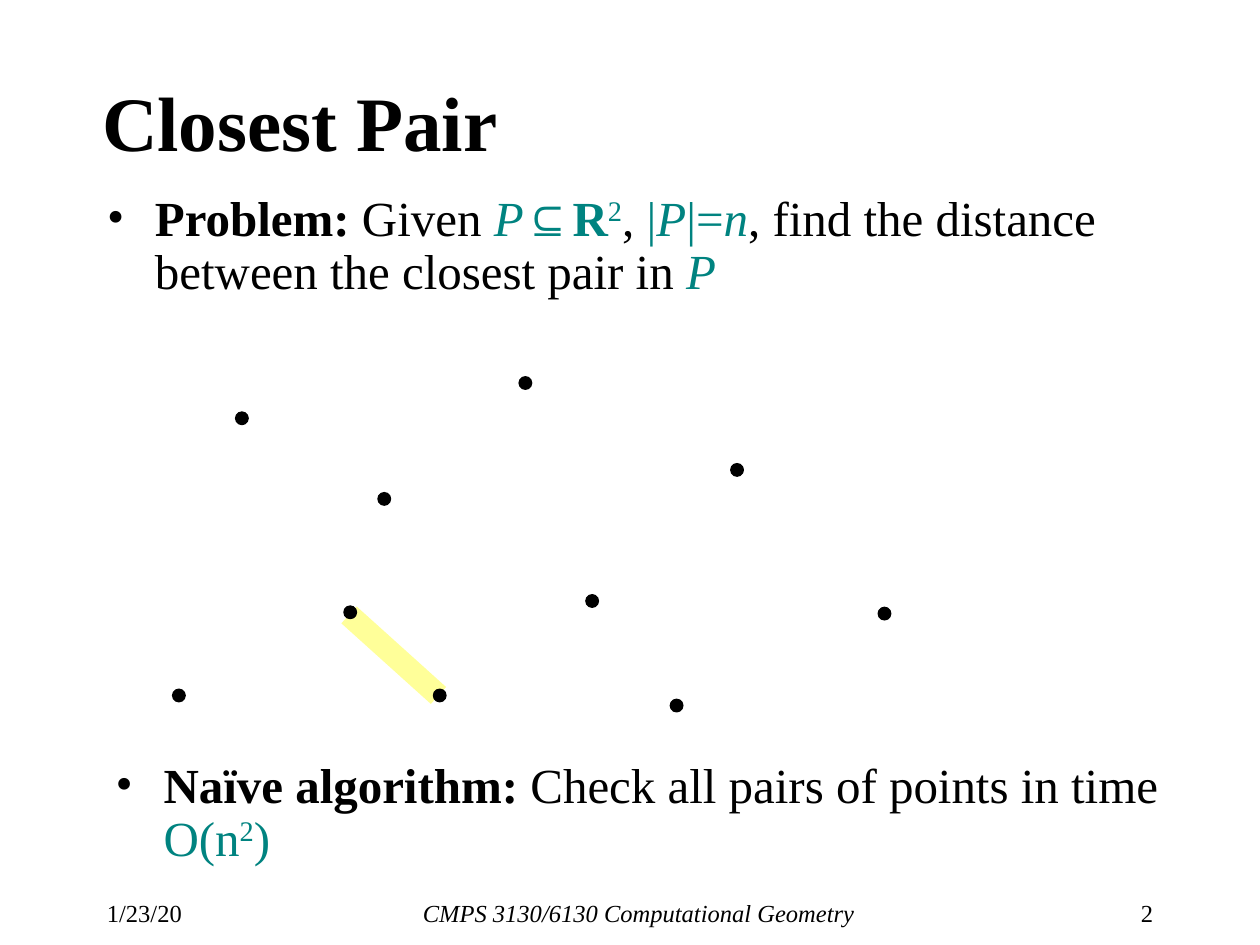
from typing import NamedTuple

from lxml.etree import SubElement
from pptx import Presentation
from pptx.dml.color import RGBColor
from pptx.enum.shapes import MSO_CONNECTOR, MSO_SHAPE
from pptx.enum.text import MSO_ANCHOR, MSO_AUTO_SIZE, PP_ALIGN
from pptx.oxml.ns import qn
from pptx.util import Inches, Pt

FONT = "Times New Roman"
BLACK = "000000"
TEAL = "008380"
YELLOW = "FFFF99"
DOT_SIZE = 0.1
FOOTER_TOP = 7.08
FOOTER_HEIGHT = 0.25


class Span(NamedTuple):
    text: str
    color: str = BLACK
    bold: bool = False
    italic: bool = False
    raised: bool = False


class Footer(NamedTuple):
    text: str
    left: float
    width: float
    alignment: PP_ALIGN
    italic: bool = False


class Point(NamedTuple):
    left: float
    top: float


FOOTERS = [
    Footer("1/23/20", 0.75, 0.95, PP_ALIGN.LEFT),
    Footer("CMPS 3130/6130 Computational Geometry", 1.9, 6.34, PP_ALIGN.CENTER, True),
    Footer("2", 8.43, 0.82, PP_ALIGN.RIGHT),
]

PROBLEM = [
    Span("Problem:", bold=True),
    Span(" Given "),
    Span("P", TEAL, italic=True),
    Span("⊆", TEAL),
    Span("R", TEAL, bold=True),
    Span("2", TEAL, raised=True),
    Span(", "),
    Span("|", TEAL),
    Span("P", TEAL, italic=True),
    Span("|=", TEAL),
    Span("n", TEAL, italic=True),
    Span(", find the distance between the closest pair in "),
    Span("P", TEAL, italic=True),
]

ALGORITHM = [
    Span("Naïve algorithm: ", bold=True),
    Span("Check all pairs of points in time "),
    Span("O(n", TEAL),
    Span("2", TEAL, raised=True),
    Span(")", TEAL),
]

POINTS = [
    Point(3.44, 5.47), Point(4.12, 2.99), Point(4.65, 4.72), Point(5.32, 5.55),
    Point(6.97, 4.82), Point(5.8, 3.68), Point(3, 3.91), Point(2.73, 4.81),
    Point(1.87, 3.27), Point(1.37, 5.47),
]


def rgb(color: str) -> RGBColor:
    return RGBColor.from_string(color)


def place(shape, left: float, top: float, width: float, height: float) -> None:
    shape.left, shape.top = Inches(left), Inches(top)
    shape.width, shape.height = Inches(width), Inches(height)


def set_font(font, size: float, color: str = BLACK) -> None:
    font.name = FONT
    font.size = Pt(size)
    font.color.rgb = rgb(color)


def add_footer(slide, footer: Footer) -> None:
    box = slide.shapes.add_textbox(
        Inches(footer.left), Inches(FOOTER_TOP), Inches(footer.width), Inches(FOOTER_HEIGHT)
    )
    box.text_frame.word_wrap = True
    paragraph = box.text_frame.paragraphs[0]
    paragraph.text = footer.text
    paragraph.alignment = footer.alignment
    set_font(paragraph.font, 14)
    paragraph.font.italic = footer.italic


def add_highlight(slide, start: Point, end: Point) -> None:
    line = slide.shapes.add_connector(
        MSO_CONNECTOR.STRAIGHT,
        Inches(start.left), Inches(start.top), Inches(end.left), Inches(end.top),
    )
    line.line.color.rgb = rgb(YELLOW)
    line.line.width = Pt(13)
    SubElement(line._element.spPr, qn("a:effectLst"))


def set_title(slide, text: str) -> None:
    title = slide.shapes.title
    place(title, 0.71, 0.33, 8.25, 1.25)
    title.text_frame.vertical_anchor = MSO_ANCHOR.MIDDLE
    paragraph = title.text_frame.paragraphs[0]
    paragraph.text = text
    paragraph.alignment = PP_ALIGN.LEFT
    set_font(paragraph.font, 44)
    paragraph.font.bold = True


def write_bullet(shape, spans: list[Span]) -> None:
    frame = shape.text_frame
    frame.word_wrap = True
    frame.auto_size = MSO_AUTO_SIZE.NONE
    paragraph = frame.paragraphs[0]
    paragraph.line_spacing = 0.9
    properties = paragraph._p.get_or_add_pPr()
    properties.set("marL", str(Inches(0.38)))
    properties.set("indent", str(Inches(-0.38)))
    spacing = SubElement(properties, qn("a:spcBef"))
    SubElement(spacing, qn("a:spcPct"), val="20000")
    SubElement(properties, qn("a:buFont"), typeface=FONT)
    SubElement(properties, qn("a:buChar"), char="•")
    for span in spans:
        run = paragraph.add_run()
        run.text = span.text
        set_font(run.font, 28, span.color)
        run.font.bold = span.bold
        run.font.italic = span.italic
        if span.raised:
            run.font._element.set("baseline", "30000")


def add_dot(slide, point: Point) -> None:
    dot = slide.shapes.add_shape(
        MSO_SHAPE.OVAL,
        Inches(point.left), Inches(point.top), Inches(DOT_SIZE), Inches(DOT_SIZE),
    )
    dot.shadow.inherit = False
    dot.fill.solid()
    dot.fill.fore_color.rgb = rgb(BLACK)
    dot.line.color.rgb = rgb(BLACK)
    dot.line.width = Pt(0.75)


def main() -> None:
    presentation = Presentation()
    presentation.slide_width = Inches(10)
    presentation.slide_height = Inches(7.5)
    slide = presentation.slides.add_slide(presentation.slide_layouts[1])

    set_title(slide, "Closest Pair")
    body = slide.placeholders[1]
    place(body, 0.75, 1.49, 8.5, 0.97)
    write_bullet(body, PROBLEM)

    for footer in FOOTERS:
        add_footer(slide, footer)
    add_highlight(slide, Point(2.77, 4.88), Point(3.48, 5.52))
    for point in POINTS:
        add_dot(slide, point)

    algorithm = slide.shapes.add_textbox(Inches(0.82), Inches(5.99), Inches(8.5), Inches(0.97))
    write_bullet(algorithm, ALGORITHM)
    presentation.save("out.pptx")


if __name__ == "__main__":
    main()
